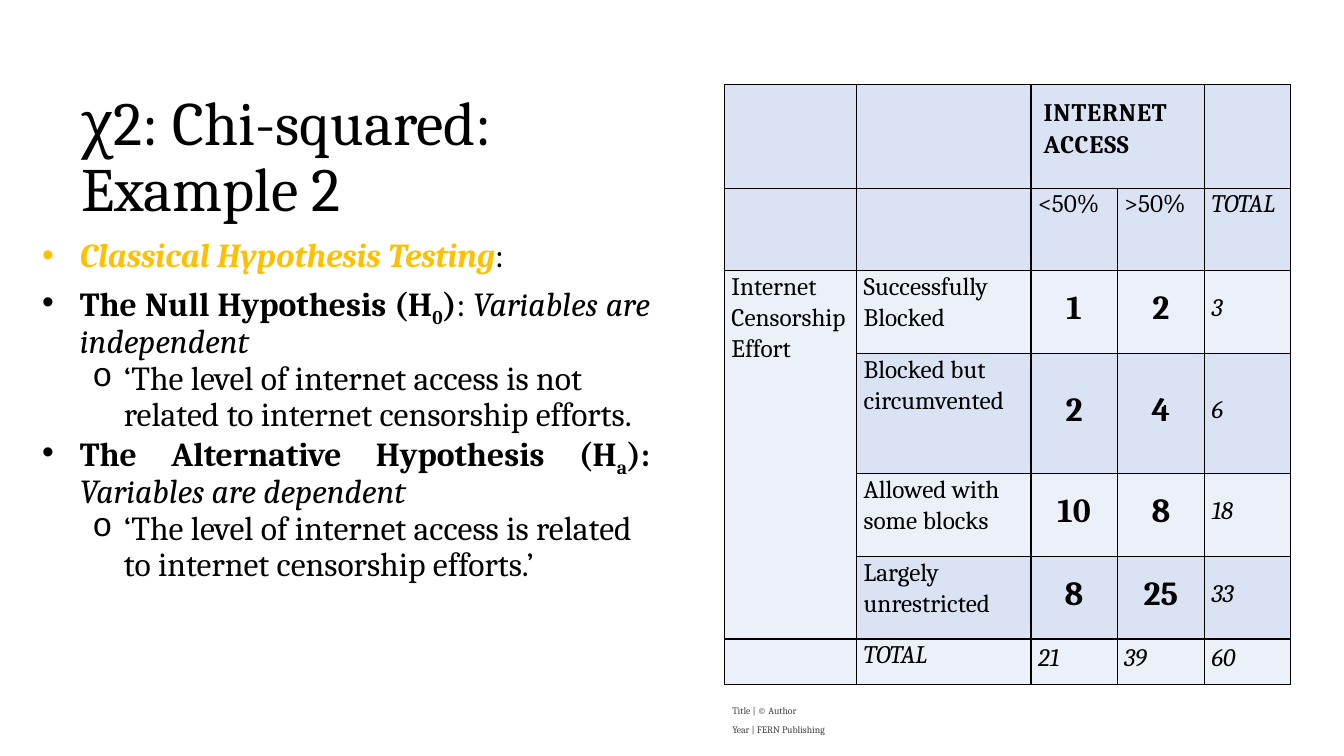
from lxml import etree
from pptx import Presentation
from pptx.dml.color import RGBColor
from pptx.enum.text import MSO_ANCHOR, PP_ALIGN
from pptx.oxml.ns import qn
from pptx.util import Pt

MIDDLE, TOP = MSO_ANCHOR.MIDDLE, MSO_ANCHOR.TOP
CENTER, JUSTIFY, LEFT = PP_ALIGN.CENTER, PP_ALIGN.JUSTIFY, PP_ALIGN.LEFT
FONT = "Cambria"
BLACK, GOLD, GREY = "000000", "FFC000", "404040"
BAND_DARK, BAND_LIGHT = "DAE3F3", "ECF1F9"

HYPOTHESES = [  # level, alignment, space after, runs of (text, style)
    (0, LEFT, 6, [("Classical Hypothesis Testing", "gold"), (":", "")]),
    (0, JUSTIFY, 0, [("The Null Hypothesis (H", "b"), ("0", "b sub"), (")", "b"),
                     (": ", ""), ("Variables are independent", "i")]),
    (1, LEFT, 0, [("‘The level of internet access is not related to internet "
                   "censorship efforts.", "")]),
    (0, JUSTIFY, 0, [("The Alternative Hypothesis (H", "b"), ("a", "b sub"),
                     ("): ", "b"), ("Variables are dependent", "i")]),
    (1, LEFT, 0, [("‘The level of internet access is related to internet "
                   "censorship efforts.’", "")]),
]
BULLETS = [("•", "Arial", 27, -27), ("o", "Courier New", 58.5, -22.5)]

ROWS = [
    ["", "", "INTERNET ACCESS", "", ""],
    ["", "", "<50%", ">50%", "TOTAL"],
    ["Internet Censorship Effort", "Successfully Blocked", "1", "2", "3"],
    ["", "Blocked but circumvented", "2", "4", "6"],
    ["", "Allowed with some blocks", "10", "8", "18"],
    ["", "Largely unrestricted", "8", "25", "33"],
    ["", "TOTAL", "21", "39", "60"],
]
COL_WIDTHS = [94.5, 124.5, 61.5, 62.5, 61.5]
ROW_HEIGHTS = [74, 59, 59, 86, 59, 59, 32.5]
LAST_ROW, LAST_COL = len(ROWS) - 1, len(COL_WIDTHS) - 1


def rgb(color):
    return RGBColor.from_string(color)


def style_run(r, size, color=BLACK, bold=False, italic=False):
    f = r.font
    f.name, f.size, f.bold, f.italic = FONT, Pt(size), bold, italic
    f.color.rgb = rgb(color)


def add_text_frame(slide, box, anchor):
    tf = slide.shapes.add_textbox(*map(Pt, box)).text_frame
    tf.word_wrap = True
    tf.vertical_anchor = anchor
    return tf


def add_lines(slide, box, lines, size, color, space_after=0):
    """Plain paragraphs, centred vertically in the box."""
    tf = add_text_frame(slide, box, MIDDLE)
    tf.text = "\n".join(lines)
    for p in tf.paragraphs:
        p.line_spacing, p.space_after = 0.9, Pt(space_after)
        style_run(p.runs[0], size, color)


def add_bullet(p, level):
    char, font, margin, indent = BULLETS[level]
    p.level = level
    pPr = p._p.get_or_add_pPr()
    pPr.set("marL", str(Pt(margin)))
    pPr.set("indent", str(Pt(indent)))
    etree.SubElement(pPr, qn("a:buFont")).set("typeface", font)
    etree.SubElement(pPr, qn("a:buChar")).set("char", char)


def add_hypotheses(slide, box):
    tf = add_text_frame(slide, box, TOP)
    for n, (level, align, after, runs) in enumerate(HYPOTHESES):
        p = tf.add_paragraph() if n else tf.paragraphs[0]
        p.alignment, p.line_spacing, p.space_after = align, 0.9, Pt(after)
        add_bullet(p, level)
        for text, style in runs:
            r = p.add_run()
            r.text = text
            marks = style.split()
            gold = "gold" in marks
            style_run(r, 24, GOLD if gold else BLACK,
                      gold or "b" in marks, gold or "i" in marks)
            if "sub" in marks:
                r.font._element.set("baseline", "-25000")


def add_borders(cell):
    tcPr = cell._tc.get_or_add_tcPr()
    for side in ("a:lnL", "a:lnR", "a:lnT", "a:lnB"):
        ln = etree.SubElement(tcPr, qn(side), w=str(Pt(1)))
        fill = etree.SubElement(ln, qn("a:solidFill"))
        etree.SubElement(fill, qn("a:srgbClr"), val=BLACK)


def fill_cell(cell, row, col, text):
    light = row >= 2 and (row % 2 == 0 or col == 0)
    heading = row == 0
    count = 2 <= row < LAST_ROW and 2 <= col < LAST_COL
    total = row > 0 and (col == LAST_COL or row == LAST_ROW)
    add_borders(cell)
    cell.fill.solid()
    cell.fill.fore_color.rgb = rgb(BAND_LIGHT if light else BAND_DARK)
    if not text:
        return
    margins = (9, 9, 9, 9) if heading else (5, 0, 5, 6.5)
    (cell.margin_left, cell.margin_top,
     cell.margin_right, cell.margin_bottom) = map(Pt, margins)
    cell.vertical_anchor = MIDDLE if row >= 2 and col >= 2 else TOP
    cell.text = text
    p = cell.text_frame.paragraphs[0]
    p.line_spacing = 1.07
    p.alignment = CENTER if count else LEFT
    r = p.runs[0]
    style_run(r, 24 if count else 18, bold=count or heading, italic=total)
    if heading:
        r.font._element.set("spc", "60")


def add_access_table(slide, left, top):
    shape = slide.shapes.add_table(
        len(ROWS), len(COL_WIDTHS), Pt(left), Pt(top),
        Pt(sum(COL_WIDTHS)), Pt(sum(ROW_HEIGHTS)))
    table = shape.table
    table.first_row = table.horz_banding = False
    for column, width in zip(table.columns, COL_WIDTHS):
        column.width = Pt(width)
    for row, height in zip(table.rows, ROW_HEIGHTS):
        row.height = Pt(height)
    for i, texts in enumerate(ROWS):
        for j, text in enumerate(texts):
            fill_cell(table.cell(i, j), i, j, text)
    table.cell(0, 2).merge(table.cell(0, 3))
    table.cell(2, 0).merge(table.cell(5, 0))


def main():
    prs = Presentation()
    prs.slide_width, prs.slide_height = Pt(960), Pt(540)
    slide = prs.slides.add_slide(prs.slide_layouts[6])
    add_lines(slide, (51, 49.5, 389.5, 127.5), ["χ2: Chi-squared: Example 2"], 44, BLACK)
    add_hypotheses(slide, (23, 167, 448.5, 353.5))
    add_lines(slide, (516, 500.5, 278, 29),
              ["Title | © Author", "Year | FERN Publishing"], 7, GREY, space_after=6)
    add_access_table(slide, 517.5, 60.5)
    prs.save("out.pptx")


if __name__ == "__main__":
    main()
